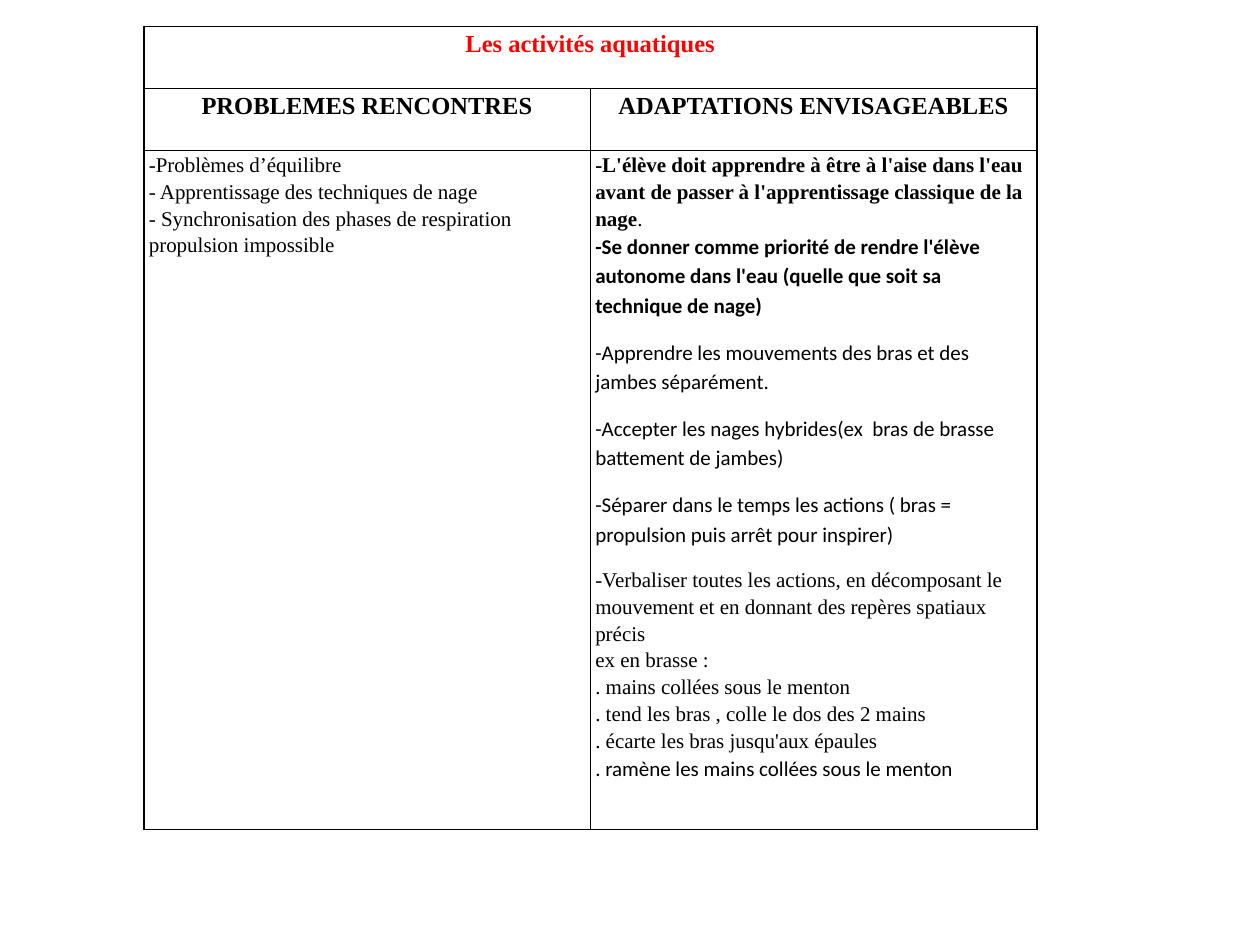
from pptx import Presentation
from pptx.dml.color import RGBColor
from pptx.enum.text import MSO_ANCHOR as Anchor, PP_ALIGN as Align
from pptx.oxml import parse_xml
from pptx.oxml.ns import nsdecls
from pptx.util import Cm, Pt

SERIF, SANS = "Times New Roman", "Calibri"
BLACK, RED = "000000", "FF0000"


def style(run, font, size, bold, color):
    run.font.name = font
    run.font.size = Pt(size)
    run.font.bold = bold
    run.font.color.rgb = RGBColor.from_string(color)


def border(cell, sides):
    props = cell._tc.get_or_add_tcPr()
    for i, (side, width) in enumerate(sides):
        props.insert(i, parse_xml(
            f'<a:ln{side} {nsdecls("a")} w="{Pt(width)}"><a:solidFill>'
            f'<a:srgbClr val="{BLACK}"/></a:solidFill></a:ln{side}>'))


title = [("Les activités aquatiques", SERIF, True, 0)]
issues = [("PROBLEMES RENCONTRES", SERIF, True, 0)]
ideas = [("ADAPTATIONS ENVISAGEABLES", SERIF, True, 0)]
left = [
    ("-Problèmes d’équilibre", SERIF, False, 0),
    ("- Apprentissage des techniques de nage", SERIF, False, 0),
    ("- Synchronisation des phases de respiration propulsion impossible", SERIF, False, 0),
]
right = [
    ("-L'élève doit apprendre à être à l'aise dans l'eau avant de passer à l'apprentissage classique de la nage", SERIF, True, 0),
    ("-Se donner comme priorité de rendre l'élève autonome dans l'eau (quelle que soit sa technique de nage)", SANS, True, 10),
    ("-Apprendre les mouvements des bras et des jambes séparément.", SANS, False, 10),
    ("-Accepter les nages hybrides(ex  bras de brasse battement de jambes)", SANS, False, 10),
    ("-Séparer dans le temps les actions ( bras = propulsion puis arrêt pour inspirer)", SANS, False, 10),
    ("-Verbaliser toutes les actions, en décomposant le mouvement et en donnant des repères spatiaux précis", SERIF, False, 0),
    ("ex en brasse :", SERIF, False, 0),
    (". mains collées sous le menton", SERIF, False, 0),
    (". tend les bras , colle le dos des 2 mains", SERIF, False, 0),
    (". écarte les bras jusqu'aux épaules", SERIF, False, 0),
    (". ramène les mains collées sous le menton", SANS, False, 10),
]

deck = Presentation()
deck.slide_width, deck.slide_height = Cm(25.4), Cm(19.05)
slide = deck.slides.add_slide(deck.slide_layouts[6])

heights = [1.25, 1.25, 13.69]
table = slide.shapes.add_table(
    3, 2, Cm(2.9), Cm(0.53), Cm(18), Cm(sum(heights))).table
table.first_row = table.horz_banding = False
for col in table.columns:
    col.width = Cm(9)
for row, height in zip(table.rows, heights):
    row.height = Cm(height)
table.cell(0, 0).merge(table.cell(0, 1))

for r, texts in enumerate([[title, []], [issues, ideas], [left, right]]):
    for c, lines in enumerate(texts):
        cell = table.cell(r, c)
        cell.fill.background()
        cell.vertical_anchor = Anchor.TOP
        cell.margin_left = cell.margin_right = Cm(0.1)
        cell.margin_top = cell.margin_bottom = 0
        border(cell, [("L", 0.5 if c else 1), ("R", 1 if c else 0.5),
                      ("T", 0.5 if r else 1), ("B", 0.5)])
        frame = cell.text_frame
        for i, (text, font, bold, after) in enumerate(lines):
            para = frame.add_paragraph() if i else frame.paragraphs[0]
            para.text = text
            para.line_spacing = 1.15
            para.space_after = Pt(after)
            para.alignment = Align.LEFT if r == 2 else Align.CENTER
            style(para.runs[0], font, 12 if r == 2 else 14, bold,
                  BLACK if r else RED)

dot = table.cell(2, 1).text_frame.paragraphs[0].add_run()
dot.text = "."
style(dot, SERIF, 12, False, BLACK)
border(table.cell(0, 0), [("R", 1)])
props = table.cell(0, 0)._tc.tcPr
props.remove(props[2])
props.insert(1, props[0])

deck.save("out.pptx")
